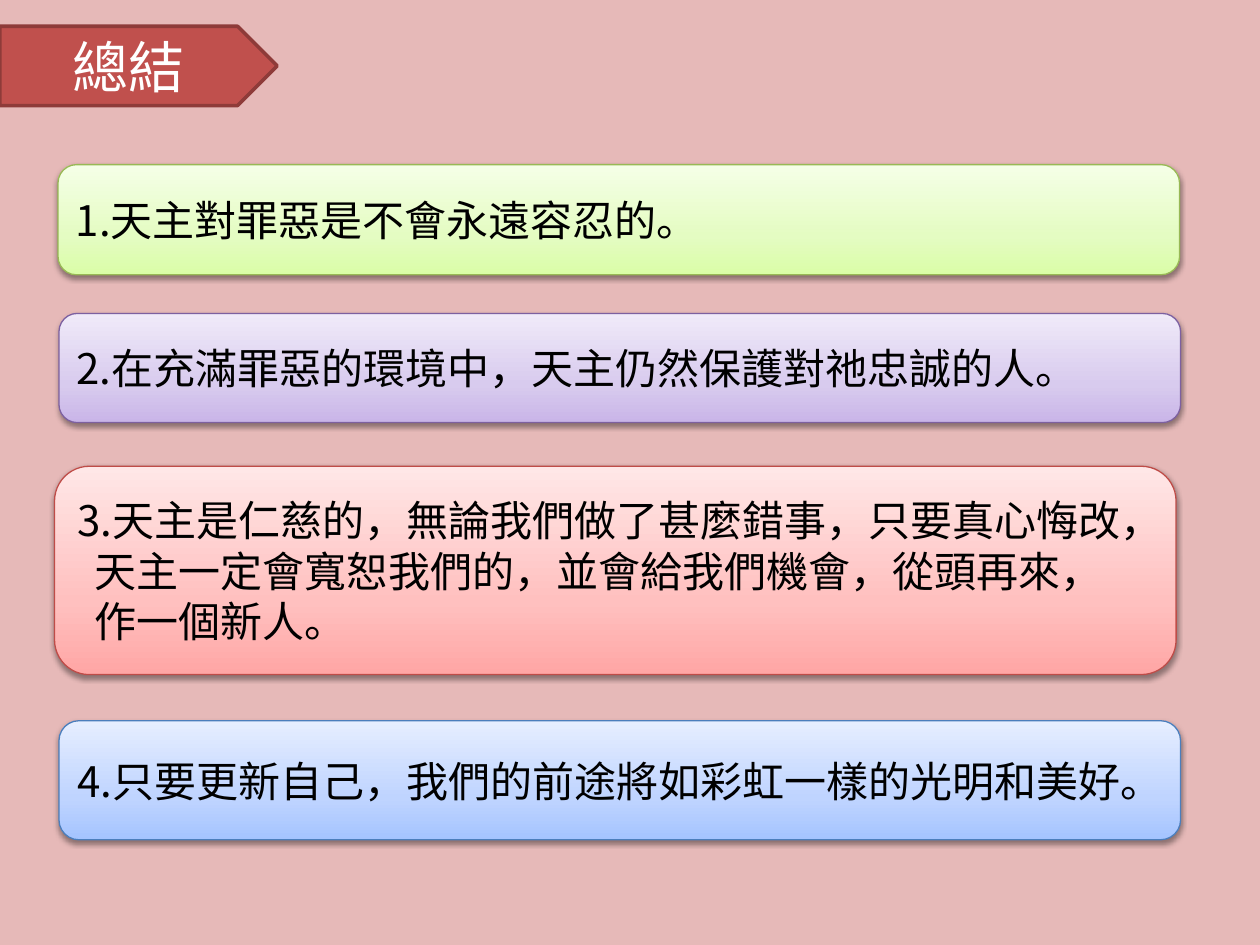
from pptx import Presentation
from pptx.dml.color import RGBColor as Rgb
from pptx.enum.shapes import MSO_SHAPE as Kind
from pptx.enum.text import MSO_ANCHOR as Anchor, PP_ALIGN as Align
from pptx.oxml import parse_xml as to_xml
from pptx.oxml.ns import nsdecls, qn
from pptx.util import Cm, Pt

FONT = "Noto Sans CJK SC"
HUES = {
    "back": "E6B9B8",
    "title": "C0504D",
    "edge": "8E3B39",
    "white": "FFFFFF",
    "black": "000000",
}
CARDS = {
    "green": ("98B955", ["DAFDA7", "E4FCC2", "F5FFE7"]),
    "violet": ("7D60A0", ["C9B5E8", "D8CBEE", "F0EAF9"]),
    "red": ("BF4C48", ["FFA6A5", "FFC0BF", "FFE7E7"]),
    "blue": ("4B7EBC", ["A4C4FF", "BFD4FF", "E6EEFF"]),
}
STOPS = (0, 35, 100)
WIDTH = 22.61
INDENT = 0.36
POINTS = [
    ("green", 1.17, 3.32, 2.22, Align.LEFT, ["1.天主對罪惡是不會永遠容忍的。"]),
    ("violet", 1.19, 6.32, 2.2, Align.LEFT,
     ["2.在充滿罪惡的環境中，天主仍然保護對祂忠誠的人。"]),
    ("red", 1.1, 9.4, 4.2, Align.LEFT,
     ["3.天主是仁慈的，無論我們做了甚麼錯事，只要真心悔改，",
      "天主一定會寬恕我們的，並會給我們機會，從頭再來，",
      "作一個新人。"]),
    ("blue", 1.19, 14.53, 2.4, Align.CENTER,
     ["4.只要更新自己，我們的前途將如彩虹一樣的光明和美好。"]),
]


class Deck:
    def __init__(self):
        self.show = Presentation()
        self.show.slide_width = Cm(25.4)
        self.show.slide_height = Cm(19.05)
        self.slide = self.show.slides.add_slide(self.show.slide_layouts[6])
        back = self.slide.background.fill
        back.solid()
        back.fore_color.rgb = Rgb.from_string(HUES["back"])

    def shape(self, kind, box, edge, width):
        shape = self.slide.shapes.add_shape(kind, *map(Cm, box))
        shape.shadow.inherit = False
        shape.line.color.rgb = Rgb.from_string(edge)
        shape.line.width = Pt(width)
        return shape

    def label(self, shape, lines, size, hue, align):
        frame = shape.text_frame
        frame.word_wrap = True
        frame.vertical_anchor = Anchor.MIDDLE
        for num, line in enumerate(lines):
            para = frame.add_paragraph() if num else frame.paragraphs[0]
            para.alignment = align
            if num:
                para._p.get_or_add_pPr().set("marL", str(Cm(INDENT)))
            run = para.add_run()
            run.text = line
            run.font.size = Pt(size)
            run.font.color.rgb = Rgb.from_string(HUES[hue])
            run.font.name = FONT
            run._r.get_or_add_rPr().append(
                to_xml(f'<a:ea {nsdecls("a")} typeface="{FONT}"/>'))

    def title(self, text):
        shape = self.shape(Kind.PENTAGON, (0, 0.53, 5.59, 1.6), HUES["edge"], 2)
        shape.fill.solid()
        shape.fill.fore_color.rgb = Rgb.from_string(HUES["title"])
        self.label(shape, [text], 32, "white", Align.CENTER)

    def card(self, name, left, top, height, align, lines):
        edge, tints = CARDS[name]
        box = (left, top, WIDTH, height)
        shape = self.shape(Kind.ROUNDED_RECTANGLE, box, edge, 0.75)
        self.blend(shape, tints)
        self.shade(shape)
        self.label(shape, lines, 24, "black", align)

    def blend(self, shape, tints):
        shape.fill.gradient()
        shape.fill.gradient_angle = 90
        stops = "".join(
            f'<a:gs pos="{stop * 1000}"><a:srgbClr val="{tint}"/></a:gs>'
            for stop, tint in zip(STOPS, tints))
        grad = shape._element.spPr.find(qn("a:gradFill"))
        grad.replace(grad.find(qn("a:gsLst")),
                     to_xml(f'<a:gsLst {nsdecls("a")}>{stops}</a:gsLst>'))

    def shade(self, shape):
        shape._element.spPr.find(qn("a:effectLst")).append(to_xml(
            f'<a:outerShdw {nsdecls("a")} blurRad="{Pt(3.1)}" dist="{Pt(1.6)}" '
            f'dir="5400000" rotWithShape="0"><a:srgbClr val="{HUES["black"]}">'
            '<a:alpha val="38000"/></a:srgbClr></a:outerShdw>'))


def main():
    deck = Deck()
    deck.title("總結")
    for point in POINTS:
        deck.card(*point)
    deck.show.save("out.pptx")


if __name__ == "__main__":
    main()
